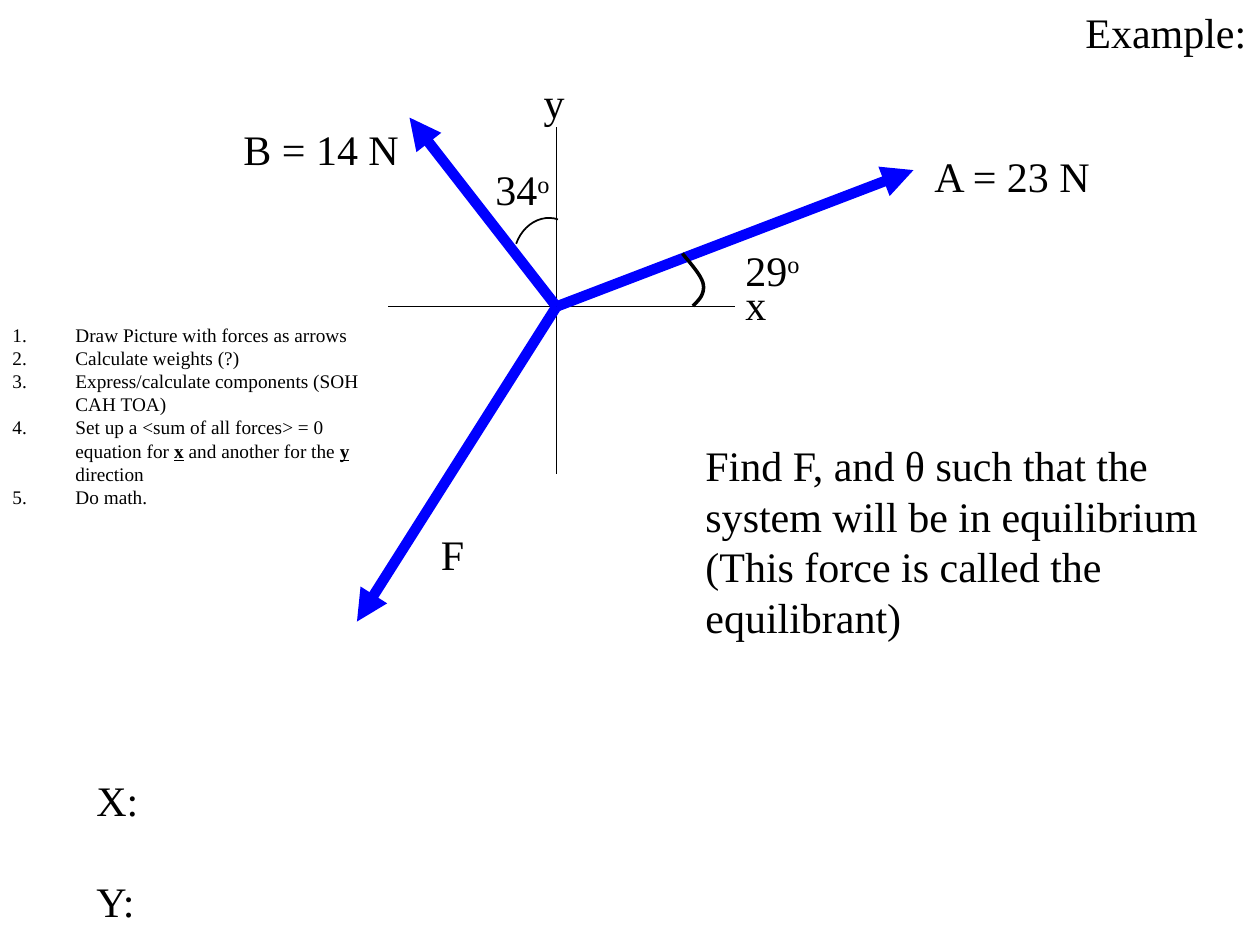
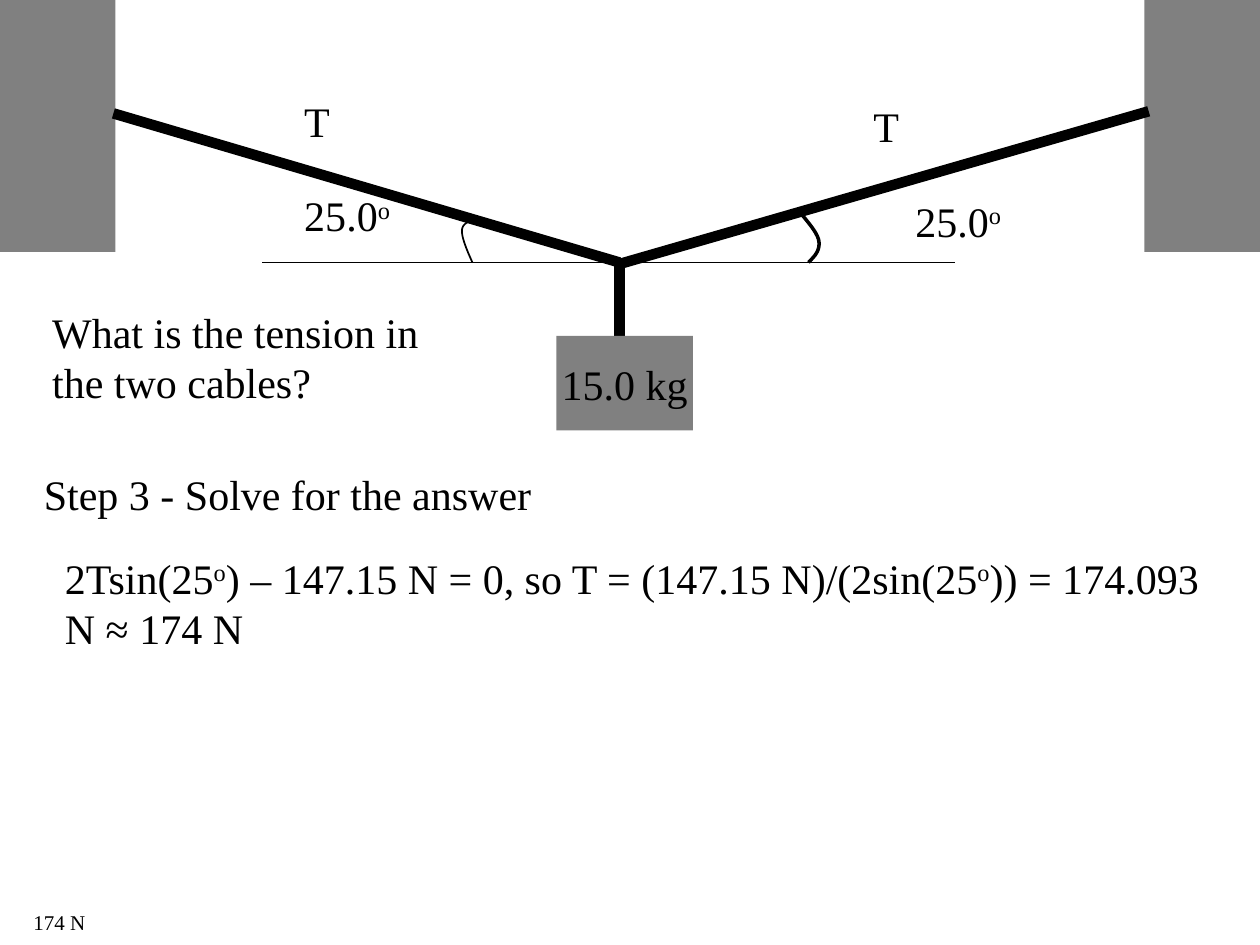
from dataclasses import dataclass
from typing import NamedTuple

from lxml.etree import SubElement
from pptx import Presentation
from pptx.dml.color import RGBColor
from pptx.enum.shapes import MSO_CONNECTOR, MSO_SHAPE
from pptx.enum.text import MSO_ANCHOR, MSO_AUTO_SIZE, PP_ALIGN
from pptx.oxml.ns import qn
from pptx.slide import Slide
from pptx.text.text import TextFrame
from pptx.util import Emu, Inches, Pt

BLACK = RGBColor(0x00, 0x00, 0x00)
BLUE = RGBColor(0x00, 0x00, 0xFF)
GREY = RGBColor(0x80, 0x80, 0x80)
FONT = "Times New Roman"
BODY = 24
THICK = 6
WIDE, HIGH = Inches(10), Inches(7.5)
COLS = 120
CELL = WIDE // COLS
ROW = 6


class Spot(NamedTuple):
    col: float
    row: float


class Box(NamedTuple):
    col: float
    row: float
    cols: float
    rows: float = ROW


@dataclass(frozen=True)
class Label:
    box: Box
    lines: tuple[str, ...]
    wrap: bool = False
    size: float = BODY
    gap: float = 0
    steps: bool = False


@dataclass(frozen=True)
class Stroke:
    start: Spot
    end: Spot
    width: float = 1
    color: RGBColor = BLACK
    arrow: bool = False


@dataclass(frozen=True)
class Curve:
    start: Spot
    bends: tuple[tuple[Spot, Spot, Spot], ...]
    width: float = 1


RIGHT_BENDS = (
    (Spot(0.9, 1.1), Spot(1.9, 2.2), Spot(2, 3)),
    (Spot(2.1, 3.9), Spot(1.6, 4.4), Spot(1, 5)),
)
LEFT_BENDS = (
    (Spot(-0.5, 0.1), Spot(-1, 0.4), Spot(-1, 1)),
    (Spot(-1, 1.7), Spot(-0.5, 2.9), Spot(0, 4)),
)

HUB = Spot(53, 29.2)
FORCE_TIPS = (Spot(87, 16.2), Spot(39, 11.2), Spot(34, 59.2))
FORCE_LINES = (
    Stroke(Spot(HUB.col, 12.1), Spot(HUB.col, 45.1)),
    Stroke(Spot(70, HUB.row), Spot(37, HUB.row)),
    *(Stroke(HUB, tip, THICK, BLUE, True) for tip in FORCE_TIPS),
)
FORCE_CURVES = (Curve(Spot(65, 24.15), RIGHT_BENDS, 2),)
FORCE_LABELS = (
    Label(Box(66, 41.3, 52.2, 20.4), (
        "Find F, and θ such that the system will be in equilibrium",
        "(This force is called the equilibrant)",
    ), wrap=True),
    Label(Box(87.8, 13.7, 17.4), ("A = 23 N",)),
    Label(Box(22, 11.2, 17.3), ("B = 14 N",)),
    Label(Box(40.8, 49.7, 4.7), ("F",)),
    Label(Box(69.8, 22.7, 7.8), ("29^o^",)),
    Label(Box(46, 15, 7.8), ("34^o^",)),
    Label(Box(50.6, 6.7, 4.4), ("y",)),
    Label(Box(69.8, 25.9, 4.4), ("x",)),
    Label(Box(102.2, 0, 17.8), ("Example:",)),
    Label(Box(8, 73.2, 6.5, 15.7), ("X:", "Y:"), gap=28.8),
    Label(Box(0, 30.2, 38, 19), (
        "Draw Picture with forces as arrows",
        "Calculate weights (?)",
        "Express/calculate components (SOH CAH TOA)",
        "Set up a <sum of all forces> = 0 equation for *x* and another for the *y* direction",
        "Do math.",
    ), wrap=True, size=11, steps=True),
)

KNOT = Spot(59, 25)
WALLS = (Box(0, 0, 11, 24), Box(109, 0, 11, 24))
MASS = Box(53, 32, 13, 9)
CABLES = (
    Stroke(Spot(10.8, 10.8), KNOT, THICK),
    Stroke(Spot(58.8, 25.2), Spot(109.4, 10.6), THICK),
    Stroke(KNOT, Spot(KNOT.col, MASS.row), THICK),
    Stroke(Spot(25, KNOT.row), Spot(91, KNOT.row)),
)
CABLE_CURVES = (
    Curve(Spot(76, 20), RIGHT_BENDS, 2),
    Curve(Spot(45, 21), LEFT_BENDS),
)
CABLE_LABELS = (
    Label(Box(3, 44, 114), ("Step 3 - Solve for the answer",), wrap=True),
    Label(Box(2, 86, 7.8, 3.6), ("174 N",), size=12),
    Label(Box(27.8, 17.5, 10.8), ("25.0^o^",)),
    Label(Box(86, 18, 10.8), ("25.0^o^",)),
    Label(Box(27.8, 8.5, 4.8), ("T",)),
    Label(Box(82, 9, 4.8), ("T",)),
    Label(Box(5, 52, 111, 10.8), (
        "2Tsin(25^o^) – 147.15 N = 0, so T = (147.15 N)/(2sin(25^o^)) = 174.093 N ≈ 174 N",
    ), wrap=True),
    Label(Box(3.8, 28.6, 38.2, 10.8), (
        "What is the tension in the two cables?",
    ), wrap=True),
)


def grid(*cells: float) -> list[Emu]:
    return [Emu(round(cell * CELL)) for cell in cells]


def write(frame: TextFrame, label: Label) -> None:
    frame.word_wrap = label.wrap
    for num, line in enumerate(label.lines):
        para = frame.add_paragraph() if num else frame.paragraphs[0]
        if num and label.gap:
            para.space_before = Pt(label.gap)
        if label.steps:
            props = para._p.get_or_add_pPr()
            props.set("marL", str(Inches(0.5)))
            props.set("indent", str(-Inches(0.5)))
            SubElement(props, qn("a:buFont"), typeface="+mj-lt")
            SubElement(props, qn("a:buAutoNum"), type="arabicPeriod")
        para.font.name = FONT
        para.font.size = Pt(label.size)
        para.font.color.rgb = BLACK
        for high, part in enumerate(line.split("^")):
            for strong, text in enumerate(part.split("*")):
                if not text:
                    continue
                run = para.add_run()
                run.text = text
                if high % 2:
                    run._r.get_or_add_rPr().set("baseline", "30000")
                if strong % 2:
                    run.font.bold = run.font.underline = True


def add_label(slide: Slide, label: Label) -> None:
    frame = slide.shapes.add_textbox(*grid(*label.box)).text_frame
    write(frame, label)
    frame.auto_size = MSO_AUTO_SIZE.SHAPE_TO_FIT_TEXT


def add_stroke(slide: Slide, stroke: Stroke) -> None:
    line = slide.shapes.add_connector(
        MSO_CONNECTOR.STRAIGHT, *grid(*stroke.start, *stroke.end))
    line.line.color.rgb = stroke.color
    line.line.width = Pt(stroke.width)
    if stroke.arrow:
        SubElement(line.line._get_or_add_ln(), qn("a:tailEnd"), type="triangle")
    SubElement(line._element.spPr, qn("a:effectLst"))


def outline(shape, width: float) -> None:
    shape.shadow.inherit = False
    shape.fill.background()
    shape.line.color.rgb = BLACK
    shape.line.width = Pt(width)


def blend(knots: tuple[Spot, ...], t: float) -> Spot:
    shares = ((1 - t) ** 3, 3 * t * (1 - t) ** 2, 3 * t * t * (1 - t), t ** 3)
    return Spot(*(sum(s * k for s, k in zip(shares, axis)) for axis in zip(*knots)))


def add_curve(slide: Slide, curve: Curve, cuts: int = 10) -> None:
    last, points = Spot(0, 0), []
    for bend in curve.bends:
        points += [blend((last, *bend), cut / cuts) for cut in range(1, cuts + 1)]
        last = bend[-1]
    pen = slide.shapes.build_freeform(*grid(*curve.start))
    pen.add_line_segments(
        [grid(curve.start.col + p.col, curve.start.row + p.row) for p in points],
        close=False)
    outline(pen.convert_to_shape(), curve.width)


def add_block(slide: Slide, box: Box, text: str = "") -> None:
    block = slide.shapes.add_shape(MSO_SHAPE.RECTANGLE, *grid(*box))
    block.shadow.inherit = False
    block.fill.solid()
    block.fill.fore_color.rgb = GREY
    block.line.fill.background()
    if text:
        frame = block.text_frame
        write(frame, Label(box, (text,)))
        frame.vertical_anchor = MSO_ANCHOR.MIDDLE
        frame.paragraphs[0].alignment = PP_ALIGN.CENTER


def draw(slide: Slide, strokes: tuple[Stroke, ...], curves: tuple[Curve, ...],
         labels: tuple[Label, ...]) -> None:
    for stroke in strokes:
        add_stroke(slide, stroke)
    for curve in curves:
        add_curve(slide, curve)
    for label in labels:
        add_label(slide, label)


def main() -> None:
    deck = Presentation()
    deck.slide_width, deck.slide_height = WIDE, HIGH
    blank = deck.slide_layouts[6]

    forces = deck.slides.add_slide(blank)
    draw(forces, FORCE_LINES, FORCE_CURVES, FORCE_LABELS)
    arc = forces.shapes.add_shape(MSO_SHAPE.ARC, *grid(48.5, 21.2, 7, 6))
    arc.rotation = 289.2
    outline(arc, 1)

    cables = deck.slides.add_slide(blank)
    for wall in WALLS:
        add_block(cables, wall)
    draw(cables, CABLES, CABLE_CURVES, CABLE_LABELS)
    add_block(cables, MASS, "15.0 kg")

    deck.save("out.pptx")


if __name__ == "__main__":
    main()
